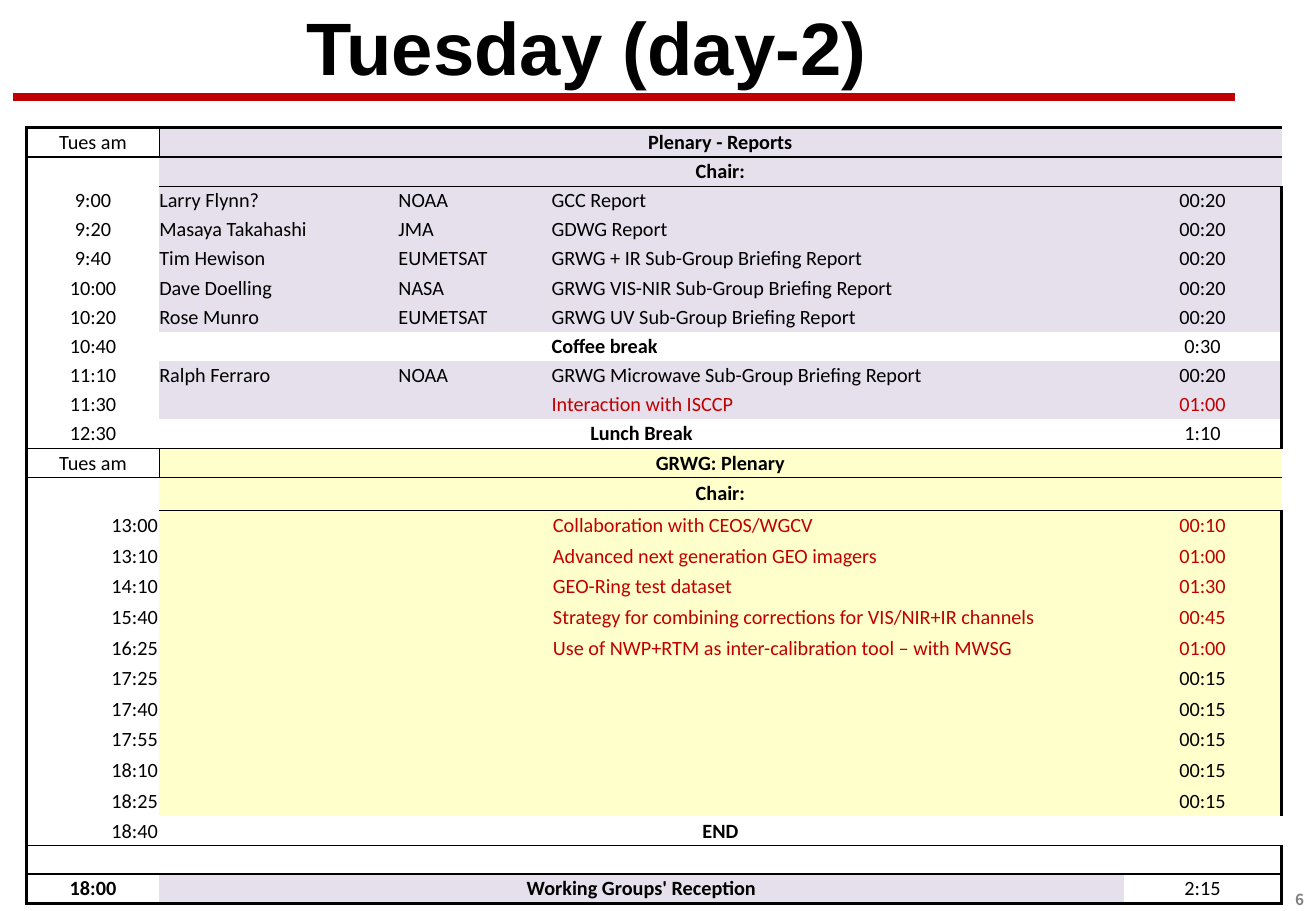
from dataclasses import dataclass

from lxml import etree
from pptx import Presentation
from pptx.dml.color import RGBColor
from pptx.enum.shapes import MSO_CONNECTOR
from pptx.enum.text import MSO_ANCHOR, MSO_AUTO_SIZE, PP_ALIGN
from pptx.oxml.ns import qn
from pptx.util import Cm, Pt

BLACK, RED, GREY = "000000", "C00000", "808080"
WHITE, LILAC, YELLOW = "FFFFFF", "E6E0EC", "FFFFCC"
PLAIN_TABLE = "{2D5ABB26-0587-4C30-8999-92F81FD0307C}"
FRAME, RULE, HAIRLINE, DIVIDER = 2.25, 1, 0.25, 0.5
COLUMNS = [2.77, 5, 3.2, 10.82, 1.14, 3.3]
LAST = len(COLUMNS) - 1


@dataclass
class Slot:
    """One agenda row; a body of one string is merged across its columns."""
    start: str
    body: object = ("", "", "")
    length: str = ""
    fill: str = WHITE
    colour: str = BLACK
    bold: bool = False
    bold_start: bool = False
    right_start: bool = False
    divider: bool = False
    rule: float = 0
    rule_from: int = 0
    height: float = 0.61
    margin: float = 0
    span_to: int = LAST


def session(name, fill, chair_height):
    return [Slot("Tues am", name, fill=fill, bold=True, divider=True, rule=RULE),
            Slot("", "Chair:", fill=fill, bold=True, rule=HAIRLINE, rule_from=1,
                 height=chair_height)]


def report(start, speaker, agency, topic):
    return Slot(start, (speaker, agency, topic), "00:20", LILAC)


def discussion(start, topic, length):
    return Slot(start, ("", "", topic), length, YELLOW, RED if topic else BLACK,
                right_start=True, height=0.64, margin=0.03)


AGENDA = [
    # Morning
    *session("Plenary - Reports", LILAC, 0.61),
    report("9:00", "Larry Flynn?", "NOAA", "GCC Report"),
    report("9:20", "Masaya Takahashi", "JMA", "GDWG Report"),
    report("9:40", "Tim Hewison", "EUMETSAT", "GRWG + IR Sub-Group Briefing Report"),
    report("10:00", "Dave Doelling", "NASA", "GRWG VIS-NIR Sub-Group Briefing Report"),
    report("10:20", "Rose Munro", "EUMETSAT", "GRWG UV Sub-Group Briefing Report"),
    Slot("10:40", ("", "", "Coffee break"), "0:30", bold=True),
    report("11:10", "Ralph Ferraro", "NOAA", "GRWG Microwave Sub-Group Briefing Report"),
    Slot("11:30", ("", "", "Interaction with ISCCP"), "01:00", LILAC, RED),
    Slot("12:30", "Lunch Break", "1:10", bold=True, rule=RULE, span_to=LAST - 1),
    # Afternoon
    *session("GRWG: Plenary", YELLOW, 0.67),
    discussion("13:00", "Collaboration with CEOS/WGCV", "00:10"),
    discussion("13:10", "Advanced next generation GEO imagers", "01:00"),
    discussion("14:10", "GEO-Ring test dataset", "01:30"),
    discussion("15:40", "Strategy for combining corrections for VIS/NIR+IR channels", "00:45"),
    discussion("16:25", "Use of NWP+RTM as inter-calibration tool – with MWSG", "01:00"),
    *[discussion(start, "", "00:15")
      for start in ("17:25", "17:40", "17:55", "18:10", "18:25")],
    Slot("18:40", "END", bold=True, right_start=True, margin=0.03, rule=HAIRLINE),
    # Evening
    Slot("", rule=RULE),
    Slot("18:00", "Working Groups' Reception", "2:15", LILAC, bold=True,
         bold_start=True, rule=FRAME, span_to=LAST - 1),
]


def rgb(value):
    return RGBColor.from_string(value)


def write(frame, text, font, size, colour, bold, align):
    paragraph = frame.paragraphs[0]
    paragraph.text = text
    paragraph.alignment = align
    for run in paragraph.runs:
        run.font.name, run.font.size, run.font.bold = font, Pt(size), bold
        run.font.color.rgb = rgb(colour)
    # The end mark keeps empty cells as low as the others
    end = etree.SubElement(paragraph._p, qn("a:endParaRPr"))
    end.set("sz", str(size * 100))


def draw_borders(cell, widths):
    properties = cell._tc.get_or_add_tcPr()
    for side in "LRTB":
        width = widths.get(side, 0)
        line = etree.SubElement(properties, qn(f"a:ln{side}"), w=str(Pt(width)))
        if width:
            fill = etree.SubElement(line, qn("a:solidFill"))
            etree.SubElement(fill, qn("a:srgbClr"), val=BLACK)
        else:
            etree.SubElement(line, qn("a:noFill"))


def cell_widths(row, column):
    """Border widths that the cell's place in the agenda calls for."""
    slot, widths = AGENDA[row], {}
    if column == 0:
        widths["L"] = FRAME
    if column == LAST:
        widths["R"] = FRAME
    if slot.divider and column < 2:
        widths["LR"[column == 0]] = DIVIDER
    if column >= slot.rule_from:
        widths["B"] = slot.rule
    if row == 0:
        widths["T"] = FRAME
    elif column >= AGENDA[row - 1].rule_from:
        widths["T"] = AGENDA[row - 1].rule
    return widths


def add_title(slide, left, top, width, height):
    title = slide.shapes.title
    title.left, title.top, title.width, title.height = map(Cm, (left, top, width, height))
    frame = title.text_frame
    frame.auto_size = MSO_AUTO_SIZE.NONE
    frame.vertical_anchor = MSO_ANCHOR.MIDDLE
    write(frame, "Tuesday (day-2)", "Arial", 44, BLACK, True, PP_ALIGN.CENTER)
    # Red rule under the title
    rule_y = Cm(top + height + 0.3)
    rule = slide.shapes.add_connector(
        MSO_CONNECTOR.STRAIGHT, Cm(left - 0.13), rule_y, Cm(left + width + 1.68), rule_y)
    rule.line.color.rgb = rgb(RED)
    rule.line.width = Pt(4.5)
    etree.SubElement(rule._element.spPr, qn("a:effectLst"))


def add_agenda(slide, left, top):
    height = sum(slot.height for slot in AGENDA)
    table = slide.shapes.add_table(len(AGENDA), len(COLUMNS), Cm(left), Cm(top),
                                   Cm(sum(COLUMNS)), Cm(height)).table
    table.first_row = table.horz_banding = False
    table._tbl.tblPr.find(qn("a:tableStyleId")).text = PLAIN_TABLE
    for column, width in zip(table.columns, COLUMNS):
        column.width = Cm(width)

    for row, slot in enumerate(AGENDA):
        table.rows[row].height = Cm(slot.height)
        merged = isinstance(slot.body, str)
        body = (slot.body, "", "") if merged else slot.body
        body_align = PP_ALIGN.CENTER if merged else PP_ALIGN.LEFT
        start_align = PP_ALIGN.RIGHT if slot.right_start else PP_ALIGN.CENTER
        for column, text in enumerate((slot.start, *body, "", slot.length)):
            cell = table.cell(row, column)
            fill, colour, bold, align = slot.fill, slot.colour, slot.bold, body_align
            if column == 0:
                fill, colour, bold, align = WHITE, BLACK, slot.bold_start, start_align
            elif column == LAST:
                bold, align = False, PP_ALIGN.CENTER
                if merged and slot.span_to < LAST:
                    fill = WHITE
            draw_borders(cell, cell_widths(row, column))
            cell.fill.solid()
            cell.fill.fore_color.rgb = rgb(fill)
            cell.margin_left = cell.margin_right = cell.margin_top = Cm(slot.margin)
            cell.margin_bottom = 0
            cell.vertical_anchor = MSO_ANCHOR.MIDDLE
            write(cell.text_frame, text, "Calibri", 12, colour, bold, align)
        if merged:
            table.cell(row, 1).merge(table.cell(row, slot.span_to))


def add_page_number(slide, left, top, width, height):
    number = slide.shapes.add_textbox(Cm(left), Cm(top), Cm(width), Cm(height))
    number.text_frame.word_wrap = True
    write(number.text_frame, "6", "Noto Sans CJK KR", 9, GREY, True, PP_ALIGN.RIGHT)


def main():
    deck = Presentation()
    deck.slide_width, deck.slide_height = Cm(27.51), Cm(19.05)
    slide = deck.slides.add_slide(deck.slide_layouts[5])
    add_title(slide, 0.41, 0.2, 23.72, 1.53)
    add_agenda(slide, 0.56, 2.67)
    add_page_number(slide, 25.15, 18.49, 2.36, 0.64)
    deck.save("out.pptx")


if __name__ == "__main__":
    main()
